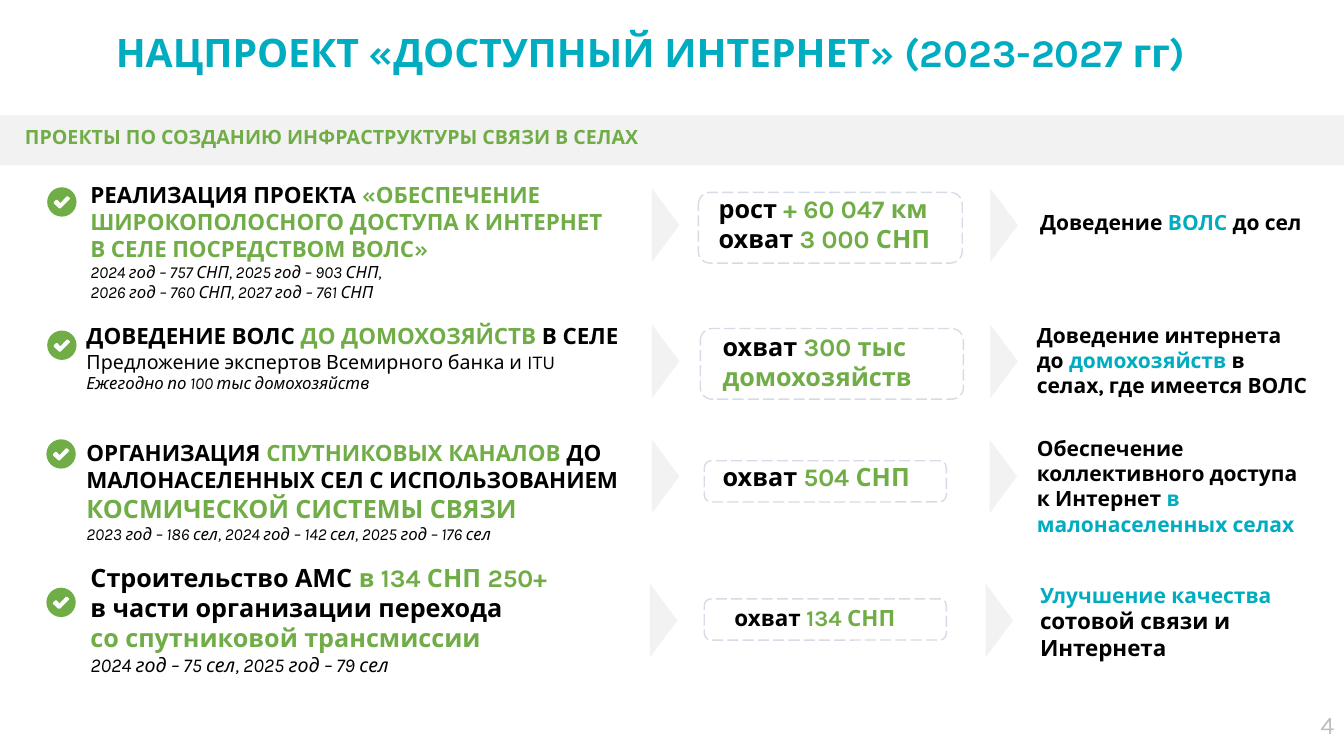
"""Build the slide on the rural internet access project."""
import pptx
import pptx.dml.color
import pptx.enum.dml
import pptx.enum.shapes
import pptx.enum.text
import pptx.util

Cm = pptx.util.Cm
SHAPE = pptx.enum.shapes.MSO_SHAPE
FONT = "Karla"
COLOURS = {"teal": "00ACC0", "green": "70AD47", "black": "000000", "white": "FFFFFF",
           "pale": "F2F2F2", "frame": "D6DCE5", "number": "BFBFBF"}
TICK = [(0.57, 0.3), (0.34, 0.53), (0.3, 0.53), (0.17, 0.41), (0.17, 0.37), (0.22, 0.32),
        (0.26, 0.32), (0.33, 0.4), (0.49, 0.23), (0.52, 0.23), (0.57, 0.27)]
BADGE_SIZE = 0.74
ARROW_LENGTH, ARROW_DEPTH = 1.85, 0.69
TIGHT = 0.1

ROWS = [
    {
        "badge": (1.19, 4.72), "arrows": (15.85, 24.38), "arrow_top": 5.33,
        "task_at": (2.18, 4.47, 16.08, 3.28),
        "task": [
            [("РЕАЛИЗАЦИЯ ПРОЕКТА ", 16, "black", "b"),
             ("«ОБЕСПЕЧЕНИЕ ШИРОКОПОЛОСНОГО ДОСТУПА К ИНТЕРНЕТ \n"
              "В СЕЛЕ ПОСРЕДСТВОМ ВОЛС»\n", 16, "green", "b"),
             ("2024 год – 757 СНП, 2025 год – 903 СНП,", 12, "black", "i")],
            [("2026 год – 760 СНП, 2027 год – 761 СНП", 12, "black", "i")]],
        "frame_at": (17.6, 4.85, 6.65, 1.78), "reach_at": (17.86, 4.75, 6.91, 1.75),
        "reach": [[("рост", 18, "black", "b"), (" + 60 047 км", 18, "green", "b")],
                  [("охват", 18, "black", "b"), (" 3 000 СНП", 18, "green", "b")]],
        "result_at": (25.96, 5.16, 7.42, 0.89),
        "result": [[("Доведение", 15, "black", "b"), (" ВОЛС ", 15, "teal", "b"),
                    ("до сел", 15, "black", "b")]],
    },
    {
        "badge": (1.19, 8.33), "arrows": (15.85, 24.38), "arrow_top": 8.76,
        "task_at": (2.08, 8.03, 16.79, 1.98),
        "task": [
            [("ДОВЕДЕНИЕ ВОЛС ", 16, "black", "b"), ("ДО ДОМОХОЗЯЙСТВ ", 16, "green", "b"),
             ("В СЕЛЕ", 16, "black", "b")],
            [("Предложение экспертов Всемирного банка и ITU", 14, "black", "")],
            [("Ежегодно по 100 тыс домохозяйств", 12, "black", "i")]],
        "frame_at": (17.65, 8.28, 6.63, 1.78), "reach_at": (17.96, 8.23, 6.91, 1.75),
        "reach": [[("охват", 18, "black", "b"), (" 300 тыс домохозяйств", 18, "green", "b")]],
        "result_at": (25.88, 8, 7.42, 2.18),
        "result": [[("Доведение интернета до ", 15, "black", "b"),
                    ("домохозяйств", 15, "teal", "b"),
                    (" в селах, где имеется ВОЛС", 15, "black", "b")]],
    },
    {
        "badge": (1.17, 11.07), "arrows": (15.85, 24.36), "arrow_top": 11.66,
        "task_at": (2.08, 10.97, 16.79, 2.84),
        "task": [
            [("ОРГАНИЗАЦИЯ", 16, "black", "b"), (" СПУТНИКОВЫХ КАНАЛОВ ", 16, "green", "b"),
             ("ДО МАЛОНАСЕЛЕННЫХ СЕЛ С ИСПОЛЬЗОВАНИЕМ ", 16, "black", "b"),
             ("КОСМИЧЕСКОЙ СИСТЕМЫ СВЯЗИ", 18, "green", "b")],
            [("2023 год – 186 сел, 2024 год – 142 сел, 2025 год – 176 сел", 12, "black", "i")]],
        "frame_at": (17.75, 11.61, 6.1, 1.04), "reach_at": (17.96, 11.51, 6.91, 1.02),
        "reach": [[("охват", 18, "black", "b"), (" 504 СНП", 18, "green", "b")]],
        "result_at": (25.88, 10.85, 7.42, 2.82),
        "result": [[("Обеспечение коллективного доступа к Интернет ", 15, "black", "b"),
                    ("в малонаселенных селах", 15, "teal", "b")]],
    },
    {
        "badge": (1.17, 14.81), "arrows": (15.8, 24.26), "arrow_top": 15.29,
        "task_at": (2.18, 14.07, 13.64, 3.1),
        "task": [
            [("Строительство АМС ", 18, "black", "b"), ("в 134 СНП 250+", 18, "green", "b")],
            [("в части организации перехода", 18, "black", "b")],
            [("со спутниковой трансмиссии", 18, "green", "b")],
            [("2024 год – 75 сел, 2025 год – 79 сел", 14, "black", "i")]],
        "frame_at": (17.75, 15.09, 6.1, 1.04), "reach_at": (18.26, 15.09, 5.89, 0.94),
        "reach": [[("охват", 16, "black", "b"), (" 134 СНП", 16, "green", "b")]],
        "result_at": (25.96, 14.55, 6.73, 2.31),
        "result": [[("Улучшение качества ", 15, "teal", "b"),
                    ("сотовой связи и Интернета", 16, "black", "b")]],
    },
]


def colour(name):
    """Return the named colour."""
    return pptx.dml.color.RGBColor.from_string(COLOURS[name])


def paint(shape, fill):
    """Give a shape a plain fill without line or shadow."""
    shape.shadow.inherit = False
    shape.fill.solid()
    shape.fill.fore_color.rgb = colour(fill)
    shape.line.fill.background()


def add_shape(shapes, kind, place, fill):
    """Add a plain filled preset shape."""
    shape = shapes.add_shape(kind, *map(Cm, place))
    paint(shape, fill)
    return shape


def add_span(para, text, size, tone, style):
    """Add a formatted run, turning newlines into line breaks."""
    for index, line in enumerate(text.split("\n")):
        if index:
            para.add_line_break()
        if line:
            span = para.add_run()
            span.text = line
            span.font.name = FONT
            span.font.size = pptx.util.Pt(size)
            span.font.bold = style == "b"
            span.font.italic = style == "i"
            span.font.color.rgb = colour(tone)


def add_text(page, place, paragraphs, inset=None, align=None):
    """Add a wrapping text box filled run by run."""
    box = page.shapes.add_textbox(*map(Cm, place))
    frame = box.text_frame
    frame.word_wrap = True
    if inset is not None:
        frame.margin_left = frame.margin_right = Cm(inset)
        frame.margin_top = frame.margin_bottom = Cm(inset)
    for index, spans in enumerate(paragraphs):
        para = frame.add_paragraph() if index else frame.paragraphs[0]
        para.alignment = align
        for span in spans:
            add_span(para, *span)


def add_badge(page, left, top):
    """Add a round badge with a tick as one group."""
    group = page.shapes.add_group_shape()
    add_shape(group.shapes, SHAPE.OVAL, (left, top, BADGE_SIZE, BADGE_SIZE), "green")
    points = [(Cm(left + x), Cm(top + y)) for x, y in TICK]
    builder = group.shapes.build_freeform(*points[0])
    builder.add_line_segments(points[1:], close=True)
    paint(builder.convert_to_shape(), "white")


def add_arrow(page, left, top):
    """Add a triangle pointing right."""
    place = (left, top, ARROW_LENGTH, ARROW_DEPTH)
    add_shape(page.shapes, SHAPE.ISOSCELES_TRIANGLE, place, "pale").rotation = 90


def add_frame(page, place):
    """Add a dashed rounded frame."""
    frame = page.shapes.add_shape(SHAPE.ROUNDED_RECTANGLE, *map(Cm, place))
    frame.shadow.inherit = False
    frame.fill.background()
    frame.line.color.rgb = colour("frame")
    frame.line.width = pptx.util.Pt(1)
    frame.line.dash_style = pptx.enum.dml.MSO_LINE.LONG_DASH


def add_row(page, row):
    """Add one project with its reach and its result."""
    add_badge(page, *row["badge"])
    add_text(page, row["task_at"], row["task"], TIGHT)
    for left in row["arrows"]:
        add_arrow(page, left, row["arrow_top"])
    add_frame(page, row["frame_at"])
    add_text(page, row["reach_at"], row["reach"])
    add_text(page, row["result_at"], row["result"])


def main():
    """Build and save the deck."""
    deck = pptx.Presentation()
    deck.slide_width, deck.slide_height = Cm(33.87), Cm(19.05)
    page = deck.slides.add_slide(deck.slide_layouts[6])
    add_text(page, (2.67, 0.58, 31.85, 1.45),
             [[("НАЦПРОЕКТ «ДОСТУПНЫЙ ИНТЕРНЕТ» (2023-2027 гг)", 28, "teal", "b")]])
    add_shape(page.shapes, SHAPE.RECTANGLE, (0, 2.9, 33.87, 1.27), "pale")
    add_text(page, (0.38, 3.02, 32.28, 0.86),
             [[("ПРОЕКТЫ ПО СОЗДАНИЮ ИНФРАСТРУКТУРЫ СВЯЗИ В СЕЛАХ", 14, "green", "b")]])
    for row in ROWS:
        add_row(page, row)
    add_text(page, (32.69, 17.75, 1.19, 1.02), [[("4", 18, "number", "")]],
             align=pptx.enum.text.PP_ALIGN.RIGHT)
    deck.save("out.pptx")


if __name__ == "__main__":
    main()
